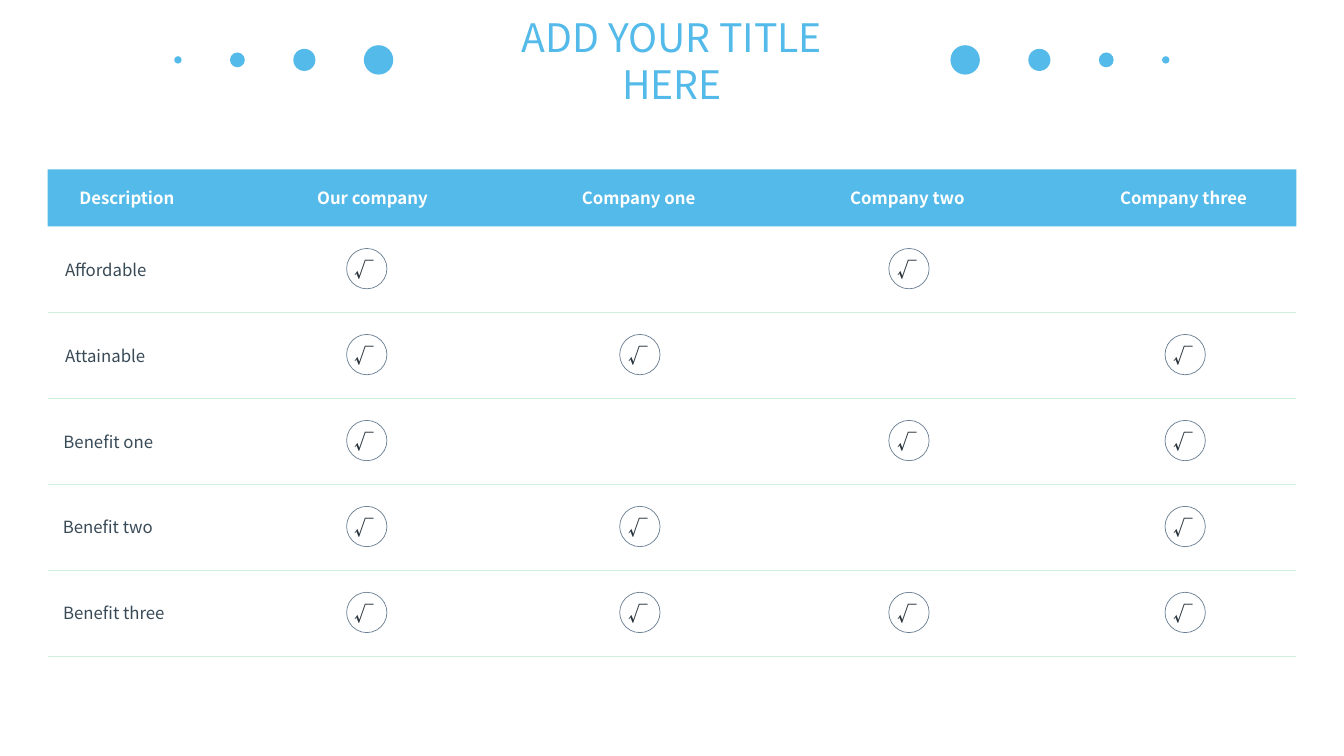
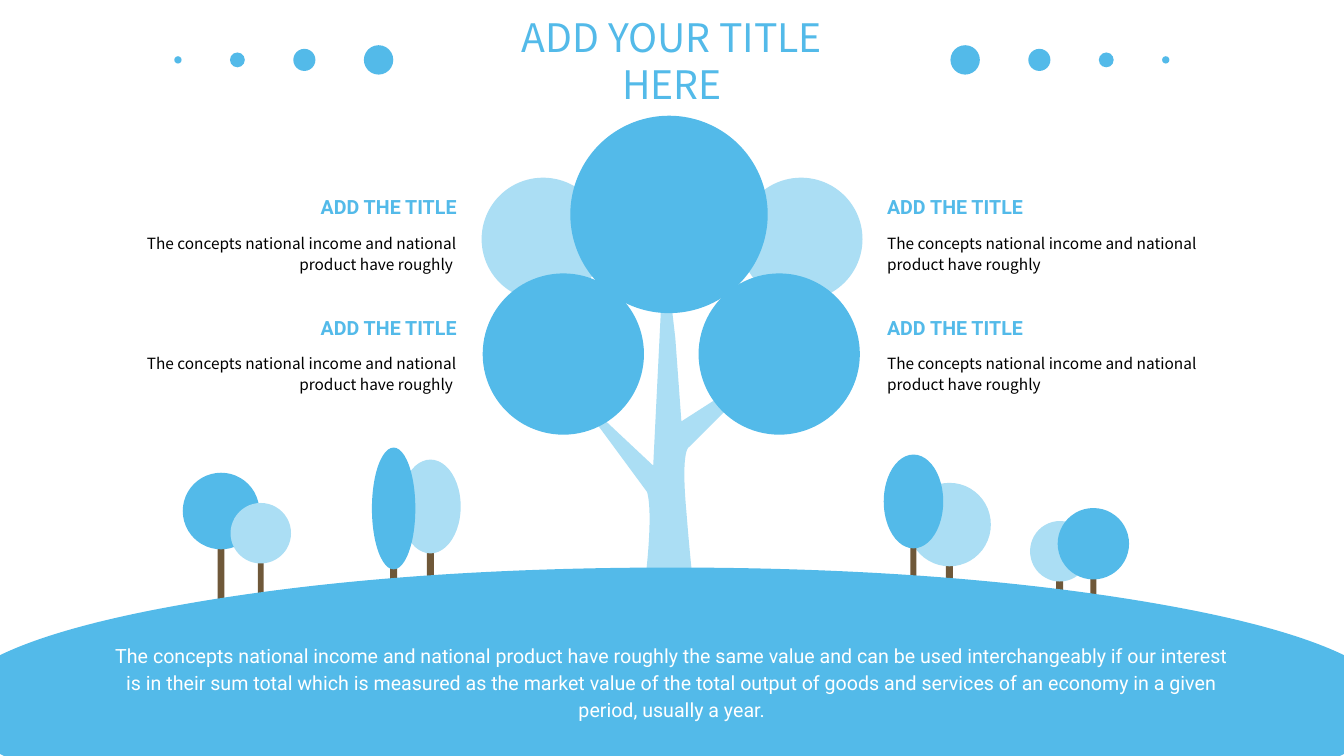
from lxml.etree import SubElement
from pptx import Presentation
from pptx.dml.color import RGBColor
from pptx.enum.shapes import MSO_CONNECTOR, MSO_SHAPE
from pptx.enum.text import MSO_ANCHOR, PP_ALIGN
from pptx.oxml.ns import qn
from pptx.util import Pt

BLUE, LIGHT, BROWN, WHITE, BLACK = "53BAE9", "ABDEF4", "6F5839", "FFFFFF", "000000"
SLATE, INK, RING, RULE = "394A57", "28333C", "697E92", "CFF0DE"
SANS, ROBOTO = "Noto Sans CJK SC", "Roboto"
W, H, MID = 960, 540, 479.9

TITLE = "ADD YOUR TITLE HERE"
TITLE_Y = 42.8
DOTS = [(209.5, 21), (262.5, 15.8), (310.3, 10.6), (352.8, 5.2)]  # offset, diameter

# heading, centre x, box width
HEADERS = [
    ("Description", 90.6, 85),
    ("Our company", 266.1, 97.2),
    ("Company one", 456.2, 100.8),
    ("Company two", 648.2, 100.1),
    ("Company three", 845.4, 108.7),
]
# feature, box width, one mark for each company
FEATURES = [
    ("Affordable", 77.8, (1, 0, 1, 0)),
    ("Attainable", 77, (1, 1, 0, 1)),
    ("Benefit one", 81.4, (1, 0, 1, 1)),
    ("Benefit two", 80.6, (1, 1, 0, 1)),
    ("Benefit three", 89.3, (1, 1, 1, 1)),
]
CHECK_X = [262, 457.1, 649.3, 846.6]
TABLE_X, TABLE_Y, TABLE_W, HEADER_H, ROW_H = 34, 121, 892, 40.7, 61.4
LABEL_X, LABEL_H, CHECK_D = 36.7, 21.8, 28.8

# centre x; crown top, width, height, colour; trunk top, width, height
SMALL_TREES = [
    (678.2, 344.9, 59.2, 59.6, LIGHT, 360, 5, 54),
    (652.5, 324.7, 42.5, 67, BLUE, 360, 4.3, 54),
    (307.5, 328.3, 43.2, 67, LIGHT, 360, 5, 54),
    (281.2, 319.7, 31, 87, BLUE, 404, 5, 15.8),
    (157.9, 337.7, 54.7, 54.7, BLUE, 378, 5, 54),
    (186.3, 359.3, 43.2, 43.2, LIGHT, 391.7, 4.3, 36),
    (757, 372.2, 42.5, 43.2, LIGHT, 380.2, 5, 46),
    (781, 362.9, 51, 51, BLUE, 395.3, 4.3, 36),
]
# left, top, diameter
BACK_CROWNS = [(528.3, 126.9, 87.8), (344, 126.9, 87.8)]
FRONT_CROWNS = [(407.4, 82.7, 141), (499, 195.3, 115.2), (344.8, 195.3, 115.2)]

# Outlines: two numbers make a straight side, six a Bezier curve
TRUNK = [
    (457.9, 437.8), (457.9, 437.8, 468, 371.5, 462.2, 351.4), (407.5, 277.2),
    (466.6, 332.6), (474.5, 172.8), (482.4, 241.9), (486.7, 301), (553, 258.5),
    (492.5, 319), (492.5, 319, 486, 319, 490.3, 365.8),
    (493.9, 411.8, 497.5, 437, 497.5, 437),
]
HILL = [
    (0, 538.6), (0, 468), (25.2, 455.8, 64.1, 444.2, 117.4, 434.2),
    (217.4, 415.4, 338.4, 405.4, 480, 405.4),
    (621.6, 405.4, 742.6, 415.4, 842.6, 434.2),
    (895.9, 444.2, 934.8, 455.8, 960, 468), (960, 538.6), (957, 540), (3, 540),
]

NOTE_TITLE = "ADD THE TITLE"
NOTE = "The concepts national income and national product have roughly"
NOTE_TITLE_W, NOTE_W = 106.6, 222.5
NOTE_LEFT_END, NOTE_RIGHT_START = 326.2, 633.6
NOTE_YS = [(147.6, 180.2), (234, 266.1)]  # centre of heading, centre of body
SUMMARY = (
    "The concepts national income and national product have roughly the same value and "
    "can be used interchangeably if our interest is in their sum total which is measured "
    "as the market value of the total output of goods and services of an economy in a "
    "given period, usually a year."
)


def rgb(color):
    return RGBColor.from_string(color)


def add_text(slide, text, x, y, w, h, size, color, font=SANS, bold=False,
             align=PP_ALIGN.CENTER, anchor=MSO_ANCHOR.MIDDLE, spacing=None,
             wrap=False, inset=True):
    tf = slide.shapes.add_textbox(Pt(x), Pt(y), Pt(w), Pt(h)).text_frame
    tf.word_wrap, tf.vertical_anchor = wrap, anchor
    if not inset:
        tf.margin_left = tf.margin_right = tf.margin_top = tf.margin_bottom = 0
    tf.text = text
    p = tf.paragraphs[0]
    p.font.size, p.font.name, p.font.bold = Pt(size), font, bold
    p.font.color.rgb = rgb(color)
    p.alignment = align
    if spacing:
        p.line_spacing = spacing


def paint(sp, fill=None, line=None):
    sp.shadow.inherit = False
    if fill:
        sp.fill.solid()
        sp.fill.fore_color.rgb = rgb(fill)
    else:
        sp.fill.background()
    if line:
        sp.line.color.rgb = rgb(line)
        sp.line.width = Pt(0.5)
    else:
        sp.line.fill.background()


def add_shape(slide, kind, x, y, w, h, fill=None, line=None):
    paint(slide.shapes.add_shape(kind, Pt(x), Pt(y), Pt(w), Pt(h)), fill, line)


def add_oval(slide, x, y, w, h, fill=None, line=None):
    add_shape(slide, MSO_SHAPE.OVAL, x, y, w, h, fill, line)


def add_rule(slide, x1, x2, y):
    line = slide.shapes.add_connector(MSO_CONNECTOR.STRAIGHT, Pt(x1), Pt(y), Pt(x2), Pt(y))
    line.line.color.rgb = rgb(RULE)
    line.line.width = Pt(0.5)
    SubElement(line._element.spPr, qn("a:effectLst"))


def add_outline(slide, outline, fill):
    """Draw a closed freeform, then turn the sides given by six numbers into curves."""
    unit = 100  # path units in a point
    parts = [[round(v * unit) for v in part] for part in outline]
    ends = [part[-2:] for part in parts]
    builder = slide.shapes.build_freeform(*ends[0], scale=Pt(1) / unit)
    builder.add_line_segments(ends[1:], close=True)
    sp = builder.convert_to_shape()
    left, top = (min(values) for values in zip(*ends))
    sides = list(sp._element.iter(qn("a:lnTo")))
    for side, part in zip(sides, parts[1:]):
        if len(part) == 6:
            curve = side.makeelement(qn("a:cubicBezTo"), {})
            for x, y in zip(part[::2], part[1::2]):
                SubElement(curve, qn("a:pt"), x=str(x - left), y=str(y - top))
            side.getparent().replace(side, curve)
    paint(sp, fill)


def new_slide(prs):
    """Add a blank slide with the shared title and its two rows of dots."""
    slide = prs.slides.add_slide(prs.slide_layouts[6])
    for side in (-1, 1):
        for offset, d in DOTS:
            add_oval(slide, MID + side * offset - d / 2, TITLE_Y - d / 2, d, d, BLUE)
    add_text(slide, TITLE, MID - 150.5, TITLE_Y - 20.5, 301, 41, 28, BLUE, wrap=True)
    return slide


def add_check(slide, x, y):
    add_oval(slide, x - CHECK_D / 2, y - CHECK_D / 2, CHECK_D, CHECK_D, line=RING)
    add_text(slide, "√", x - 15.8, y - 11.7, 28.8, 24.5, 14, INK, bold=True)


def add_comparison(slide):
    add_shape(slide, MSO_SHAPE.RECTANGLE, TABLE_X, TABLE_Y, TABLE_W, HEADER_H, BLUE)
    for text, cx, w in HEADERS:
        add_text(slide, text, cx - w / 2, TABLE_Y + 9.3, w, LABEL_H, 12, WHITE, bold=True)
    for i, (name, w, marks) in enumerate(FEATURES):
        top = TABLE_Y + HEADER_H + i * ROW_H
        add_text(slide, name, LABEL_X, top + 19.8, w, LABEL_H, 12, SLATE)
        add_rule(slide, TABLE_X, TABLE_X + TABLE_W, top + ROW_H)
        for x, mark in zip(CHECK_X, marks):
            if mark:
                add_check(slide, x, top + ROW_H / 2 - 0.5)


def add_landscape(slide):
    for cx, top, w, h, color, trunk_y, trunk_w, trunk_h in SMALL_TREES:
        add_shape(slide, MSO_SHAPE.RECTANGLE, cx - trunk_w / 2, trunk_y,
                  trunk_w, trunk_h, BROWN)
        add_oval(slide, cx - w / 2, top, w, h, color)
    for x, y, d in BACK_CROWNS:
        add_oval(slide, x, y, d, d, LIGHT)
    add_outline(slide, TRUNK, LIGHT)
    add_outline(slide, HILL, BLUE)
    add_text(slide, SUMMARY, 81.4, 457.9, 797, 62, 14, WHITE, font=ROBOTO,
             anchor=MSO_ANCHOR.TOP, spacing=1.14, wrap=True, inset=False)
    for x, y, d in FRONT_CROWNS:
        add_oval(slide, x, y, d, d, BLUE)


def add_tree_notes(slide):
    right = NOTE_RIGHT_START
    sides = [
        (right, right, PP_ALIGN.LEFT, NOTE),
        (NOTE_LEFT_END - NOTE_TITLE_W, NOTE_LEFT_END - NOTE_W, PP_ALIGN.RIGHT, NOTE + " "),
    ]
    for title_x, body_x, align, body in sides:
        for title_y, body_y in NOTE_YS:
            add_text(slide, NOTE_TITLE, title_x, title_y - 8.7, NOTE_TITLE_W, 17.3, 14,
                     BLUE, font=ROBOTO, bold=True, align=align, inset=False)
            add_text(slide, body, body_x, body_y - 14.8, NOTE_W, 29.6, 11, BLACK,
                     align=align, spacing=1.14, wrap=True, inset=False)


def main():
    prs = Presentation()
    prs.slide_width, prs.slide_height = Pt(W), Pt(H)
    add_comparison(new_slide(prs))
    slide = new_slide(prs)
    add_landscape(slide)
    add_tree_notes(slide)
    prs.save("out.pptx")


if __name__ == "__main__":
    main()
